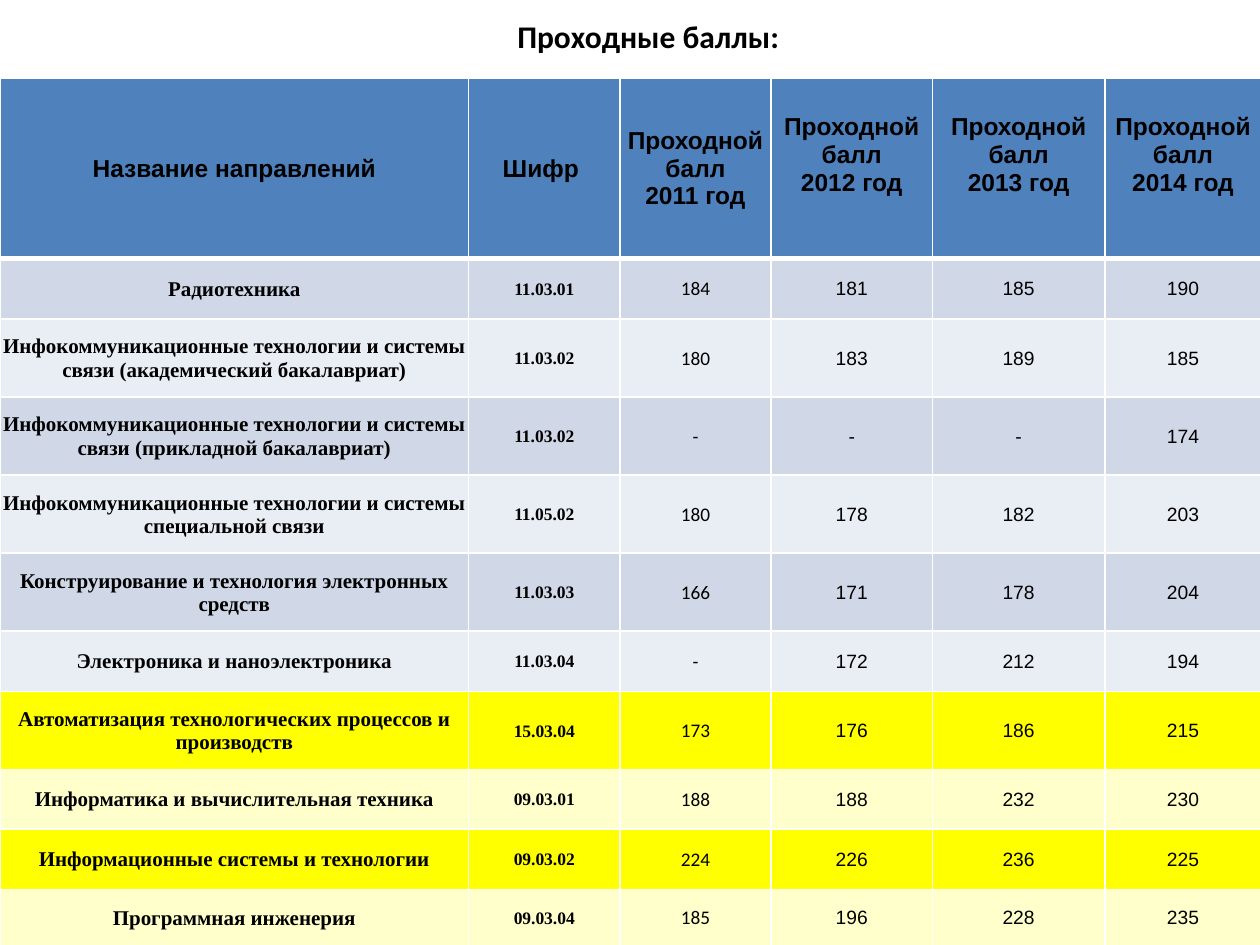
from lxml.etree import SubElement
from pptx import Presentation
from pptx.dml.color import RGBColor
from pptx.enum.text import MSO_ANCHOR, PP_ALIGN
from pptx.oxml.ns import qn
from pptx.util import Inches, Pt

BLACK = RGBColor(0x00, 0x00, 0x00)
WHITE = RGBColor(0xFF, 0xFF, 0xFF)
HEADER_BLUE = RGBColor(0x4F, 0x81, 0xBD)
BLUE_BANDS = (RGBColor(0xD0, 0xD8, 0xE8), RGBColor(0xE9, 0xED, 0xF4))
YELLOW_BANDS = (RGBColor(0xFF, 0xFF, 0x00), RGBColor(0xFF, 0xFF, 0xCC))

TITLE = "Проходные баллы:"
YEARS = (2011, 2012, 2013, 2014)
HEADINGS = ["Название направлений", "Шифр "] + [
    f"Проходной балл\n{year} год" for year in YEARS
]
BLUE_PROGRAMS = [
    ("Радиотехника", "11.03.01", "184", "181", "185", "190"),
    ("Инфокоммуникационные технологии и системы связи (академический бакалавриат)",
     "11.03.02", "180", "183", "189", "185"),
    ("Инфокоммуникационные технологии и системы связи (прикладной бакалавриат)",
     "11.03.02", "-", "-", "-", "174"),
    ("Инфокоммуникационные технологии и системы специальной связи",
     "11.05.02", "180", "178", "182", "203"),
    ("Конструирование и технология электронных средств",
     "11.03.03", "166", "171", "178", "204"),
    ("Электроника и наноэлектроника", "11.03.04", "-", "172", "212", "194"),
]
YELLOW_PROGRAMS = [
    ("Автоматизация технологических процессов и производств",
     "15.03.04", "173", "176", "186", "215"),
    ("Информатика и вычислительная техника", "09.03.01", "188", "188", "232", "230"),
    ("Информационные системы и технологии", "09.03.02", "224", "226", "236", "225"),
    ("Программная инженерия", "09.03.04", "185", "196", "228", "235"),
]
COLUMN_WIDTHS = (3.72, 1.2, 1.2, 1.28, 1.37, 1.24)
ROW_HEIGHTS = (1.43, 0.48, 0.62, 0.62, 0.62, 0.62, 0.48, 0.62, 0.47, 0.48, 0.45)
HEADER_STYLE = ("Arial", 14, True)
COLUMN_STYLES = [
    ("Times New Roman", 12, True),
    ("Times New Roman", 10, True),
    ("Calibri", 11, False),
] + [("Arial", 11, False)] * 3


def write_text(frame, text, style):
    frame.text = text
    for paragraph in frame.paragraphs:
        paragraph.alignment = PP_ALIGN.CENTER
        font = paragraph.font
        font.name, font.bold = style[0], style[2]
        font.size = Pt(style[1])
        font.color.rgb = BLACK


def add_borders(cell, bottom_width):
    properties = cell._tc.get_or_add_tcPr()
    for side, width in (("L", 1), ("R", 1), ("T", 1), ("B", bottom_width)):
        line = SubElement(properties, qn(f"a:ln{side}"), w=str(Pt(width)))
        fill = SubElement(line, qn("a:solidFill"))
        SubElement(fill, qn("a:srgbClr"), val=str(WHITE))


def fill_cell(cell, text, style, color, bottom_margin=0, bottom_border=1):
    write_text(cell.text_frame, text, style)
    cell.vertical_anchor = MSO_ANCHOR.MIDDLE
    cell.margin_left = cell.margin_right = cell.margin_top = Inches(0.01)
    cell.margin_bottom = Inches(bottom_margin)
    add_borders(cell, bottom_border)
    cell.fill.solid()
    cell.fill.fore_color.rgb = color


presentation = Presentation()
presentation.slide_width = Inches(10)
presentation.slide_height = Inches(7.5)
slide = presentation.slides.add_slide(presentation.slide_layouts[6])

title = slide.shapes.add_textbox(Inches(0.67), Inches(0.08), Inches(8.95), Inches(0.41))
title.text_frame.word_wrap = True
title.text_frame.vertical_anchor = MSO_ANCHOR.MIDDLE
write_text(title.text_frame, TITLE, ("Calibri", 18, True))

scores = slide.shapes.add_table(
    len(ROW_HEIGHTS), len(COLUMN_WIDTHS), 0, Inches(0.62), Inches(10), Inches(6.88)
).table
for column, width in zip(scores.columns, COLUMN_WIDTHS):
    column.width = Inches(width)
for row, height in zip(scores.rows, ROW_HEIGHTS):
    row.height = Inches(height)

for column, heading in enumerate(HEADINGS):
    lift = 0.22 if column > 2 else 0
    fill_cell(scores.cell(0, column), heading, HEADER_STYLE, HEADER_BLUE, lift, 3)

for row, program in enumerate(BLUE_PROGRAMS + YELLOW_PROGRAMS):
    bands = BLUE_BANDS if row < len(BLUE_PROGRAMS) else YELLOW_BANDS
    for column, (text, style) in enumerate(zip(program, COLUMN_STYLES)):
        fill_cell(scores.cell(row + 1, column), text, style, bands[row % 2])

presentation.save("out.pptx")
